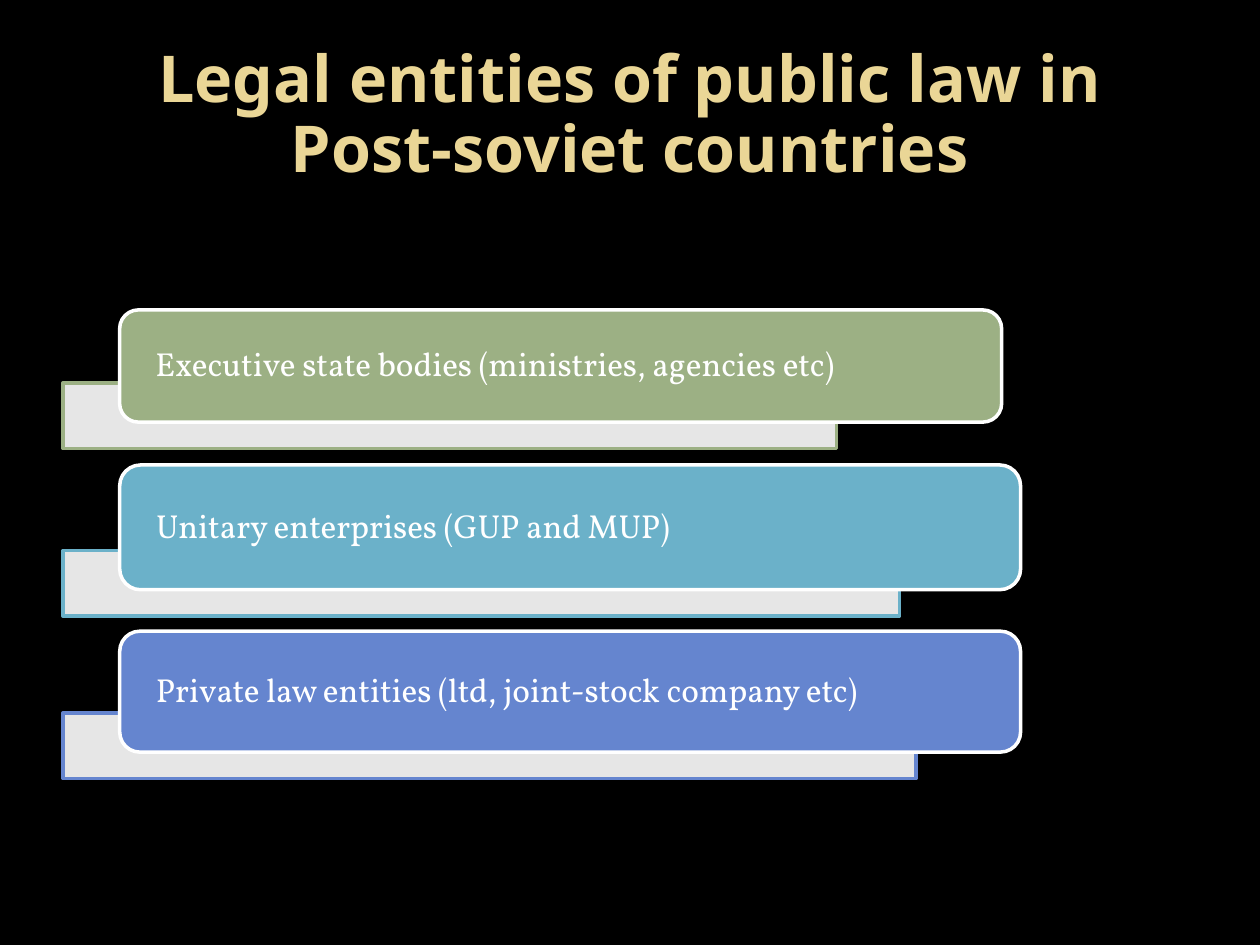
from lxml import etree
from pptx import Presentation
from pptx.dml.color import RGBColor
from pptx.enum.shapes import MSO_SHAPE as SHAPE
from pptx.enum.text import MSO_ANCHOR as ANCHOR, PP_ALIGN as ALIGN
from pptx.oxml.ns import qn
from pptx.util import Inches, Pt

COLORS = {
    "background": "000000", "title": "EAD696", "white": "FFFFFF",
    "green": "9CB084", "teal": "6BB1C9", "blue": "6585CF",
}
BAR_LEFT, BAR_HEIGHT, BAR_OVERLAP = 0.5, 0.52, 0.31
LABEL_LEFT = 0.95

# text, color, label top, label width, label height, bar width
ENTITIES = [
    ("Executive state bodies (ministries, agencies etc)", "green", 2.46, 7, 0.89, 6.14),
    ("Unitary enterprises (GUP and MUP)", "teal", 3.69, 7.15, 0.99, 6.64),
    ("Private law entities (ltd, joint-stock company etc)", "blue", 5.01, 7.15, 0.96, 6.77),
]


def rgb(name):
    return RGBColor.from_string(COLORS[name])


def write(shape, text, font, size, color, bold=False, align=ALIGN.LEFT):
    tf = shape.text_frame
    tf.word_wrap = True
    tf.vertical_anchor = ANCHOR.MIDDLE
    tf.text = text
    p = tf.paragraphs[0]
    p.alignment = align
    p.line_spacing = 0.9
    f = p.runs[0].font
    f.name, f.size, f.bold = font, Pt(size), bold
    f.color.rgb = rgb(color)


def add_title(s, text):
    title = s.shapes.add_textbox(Inches(0.5), Inches(0.3), Inches(9), Inches(1.25))
    write(title, text, "Noto Sans", 36.9, "title", True, ALIGN.CENTER)


def add_box(s, kind, left, top, width, height, fill, line):
    box = s.shapes.add_shape(kind, Inches(left), Inches(top), Inches(width), Inches(height))
    box.shadow.inherit = False
    box.fill.solid()
    box.fill.fore_color.rgb = rgb(fill)
    box.line.color.rgb = rgb(line)
    box.line.width = Pt(2)
    return box


def set_opacity(shape, percent):
    color = shape.fill._xPr.find(qn("a:solidFill"))[0]
    etree.SubElement(color, qn("a:alpha")).set("val", str(percent * 1000))


def add_entity(s, text, color, top, width, height, bar_width):
    """Add a rounded label over the upper part of a pale bar."""
    bar_top = top + height - BAR_OVERLAP
    bar = add_box(s, SHAPE.RECTANGLE, BAR_LEFT, bar_top, bar_width, BAR_HEIGHT, "white", color)
    set_opacity(bar, 90)
    label = add_box(s, SHAPE.ROUNDED_RECTANGLE, LABEL_LEFT, top, width, height, color, "white")
    tf = label.text_frame
    tf.margin_left = tf.margin_right = Inches(0.24)
    tf.margin_top = tf.margin_bottom = 0
    write(label, text, "Vollkorn", 19, "white")


def main():
    prs = Presentation()
    prs.slide_width, prs.slide_height = Inches(10), Inches(7.5)
    s = prs.slides.add_slide(prs.slide_layouts[6])
    s.background.fill.solid()
    s.background.fill.fore_color.rgb = rgb("background")
    add_title(s, "Legal entities of public law in Post-soviet countries")
    for entity in ENTITIES:
        add_entity(s, *entity)
    prs.save("out.pptx")


if __name__ == "__main__":
    main()
